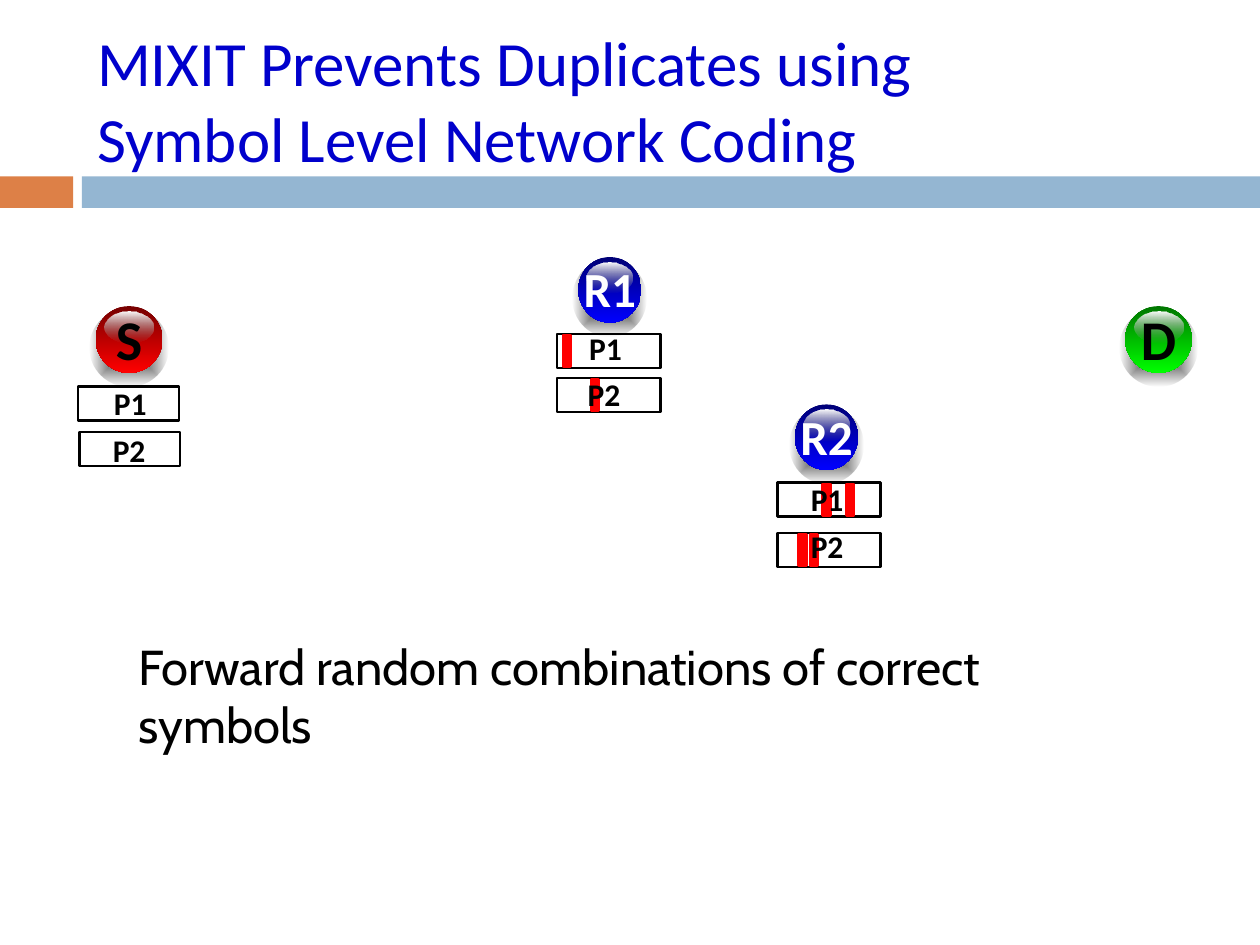
from lxml import etree
from pptx import Presentation, util as u
from pptx.dml.color import RGBColor
from pptx.enum import shapes as sh, text as tx
from pptx.oxml.ns import qn

HUES = {"title": "0000CC", "text": "000000", "light": "FFFFFF", "accent": "DD8047",
        "band": "94B6D2", "error": "FF0000", "gloss": "767676",
        "red": ("760000", "FF0000"), "blue": ("000076", "0000FF"),
        "green": ("007600", "00FF00")}
KIND = sh.MSO_SHAPE

deck = Presentation()
deck.slide_width, deck.slide_height = u.Inches(10), u.Inches(7.5)
slide = deck.slides.add_slide(deck.slide_layouts[5])


def draw(kind, box, fill=None, line=None, fade=None):
    """Add a shape; a pair of colours as fill makes a gradient, fade its end clear."""
    item = slide.shapes.add_shape(kind, *map(u.Inches, box))
    item.shadow.inherit = False
    if line:
        item.line.color.rgb = RGBColor.from_string(line)
        item.line.width = u.Pt(1.5)
    else:
        item.line.fill.background()
    if fill is None:
        item.fill.background()
    elif isinstance(fill, str):
        item.fill.solid()
        item.fill.fore_color.rgb = RGBColor.from_string(fill)
    else:
        item.fill.gradient()
        item.fill.gradient_angle = 270
        for stop, hue, pos in zip(item.fill.gradient_stops, fill, (0, 1)):
            stop.color.rgb = RGBColor.from_string(hue)
            stop.position = pos
        grad = item._element.spPr.find(qn("a:gradFill"))
        if fade:
            last = grad.findall(".//" + qn("a:srgbClr"))[-1]
            etree.SubElement(last, qn("a:alpha"), val="0")
        if fade == "round":
            lin = grad.find(qn("a:lin"))
            ring = etree.Element(qn("a:path"), path="shape")
            etree.SubElement(ring, qn("a:fillToRect"),
                             {side: "50000" for side in "ltrb"})
            grad.replace(lin, ring)


def write(words, box, size, hue="text", font="Calibri", bold=True, wrap=False,
          align=tx.PP_ALIGN.CENTER, item=None):
    """Put text in a new text box, or in the given placeholder."""
    item = item or slide.shapes.add_textbox(0, 0, 0, 0)
    for key, val in zip(("left", "top", "width", "height"), box):
        setattr(item, key, u.Inches(val))
    frame = item.text_frame
    frame.text = words
    frame.word_wrap = wrap
    frame.auto_size = tx.MSO_AUTO_SIZE.NONE
    frame.vertical_anchor = tx.MSO_ANCHOR.MIDDLE if item.is_placeholder else tx.MSO_ANCHOR.TOP
    para = frame.paragraphs[0]
    para.alignment = align
    look = {"name": font, "size": u.Pt(size), "bold": bold}
    for run in para.runs:
        for key, val in look.items():
            setattr(run.font, key, val)
        run.font.color.rgb = RGBColor.from_string(HUES[hue])


# Title, its band and the closing line
draw(KIND.RECTANGLE, (0, 1.4, 0.58, 0.25), HUES["accent"])
draw(KIND.RECTANGLE, (0.65, 1.4, 9.35, 0.25), HUES["band"])
plain = {"bold": False, "wrap": True, "align": tx.PP_ALIGN.LEFT}
write("MIXIT Prevents Duplicates using \vSymbol Level Network Coding",
      (0.67, 0.25, 8.92, 1.08), 36, "title", item=slide.shapes.title, **plain)
write("Forward random combinations of correct symbols",
      (1, 5, 8.23, 0.57), 28, font="Cabin", **plain)

# Nodes: name, colour, ball box, label size, label colour, label height
nodes = [
    ("R1", "blue", (4.59, 2.04, 0.5, 0.52), 28, "light", 0.57),
    ("D", "green", (8.93, 2.43, 0.53, 0.53), 32, "text", 0.64),
    ("R2", "blue", (6.31, 3.21, 0.5, 0.52), 28, "light", 0.57),
    ("S", "red", (0.76, 2.43, 0.53, 0.53), 32, "text", 0.64),
]
for name, hue, (x, y, w, h), size, ink, tall in nodes:
    mid = x + w / 2
    shade, shine = 1.17 * w, 0.73 * w
    draw(KIND.OVAL, (mid - shade / 2, y + 0.02, shade, 1.17 * h),
         (HUES["text"], HUES["text"]), fade="round")
    draw(KIND.OVAL, (x, y, w, h), HUES[hue])
    draw(KIND.OVAL, (mid - shine / 2, y + 0.04, shine, 0.47 * h),
         (HUES["light"], HUES["gloss"]), fade="down")
    write(name, (mid - 0.31, y + h / 2 - tall / 2 - 0.01, 0.62, tall), size, ink)

# Packets: name, frame corner and width, label corner, left edges of bad symbols
packets = [
    ("P1", (0.62, 3.07, 0.8), (0.8, 3), ()),
    ("P2", (0.63, 3.43, 0.8), (0.79, 3.37), ()),
    ("P1", (4.42, 2.65, 0.82), (4.57, 2.56), (4.47,)),
    ("P2", (4.42, 3, 0.82), (4.56, 2.93), (4.69,)),
    ("P1", (6.17, 3.83, 0.82), (6.33, 3.76), (6.53, 6.72)),
    ("P2", (6.17, 4.23, 0.82), (6.33, 4.13), (6.34, 6.43)),
]
for name, (x, y, w), spot, errors in packets:
    draw(KIND.RECTANGLE, (x, y, w, 0.27), line=HUES["text"])
    for left in errors:
        draw(KIND.RECTANGLE, (left, y + 0.01, 0.06, 0.25), HUES["error"], HUES["error"])
    write(name, (*spot, 0.47, 0.4), 18)

deck.save("out.pptx")
